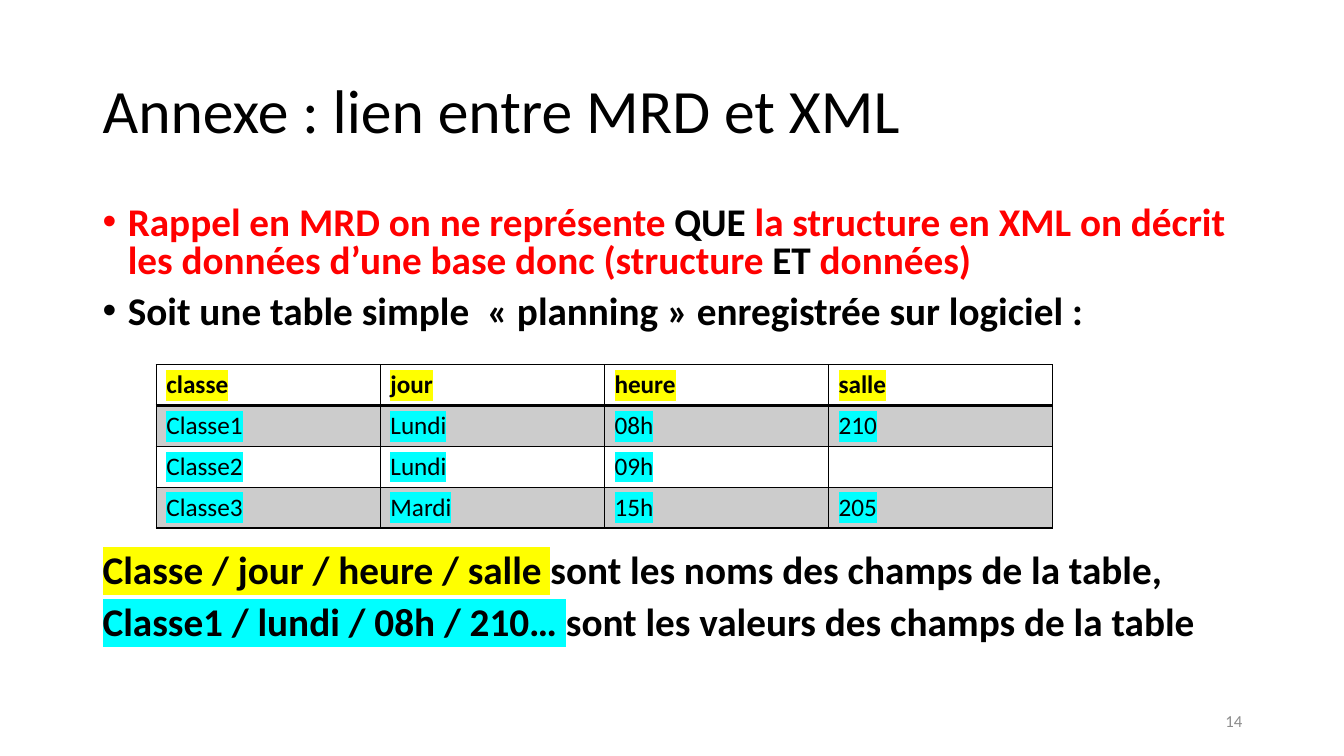
import pptx
import pptx.util
import pptx.dml.color
import pptx.enum.text
import pptx.oxml
import pptx.oxml.ns
from lxml import etree

Inches = pptx.util.Inches
Pt = pptx.util.Pt
RGBColor = pptx.dml.color.RGBColor
Anchor = pptx.enum.text.MSO_ANCHOR
Align = pptx.enum.text.PP_ALIGN
qn = pptx.oxml.ns.qn

BLACK = RGBColor(0x00, 0x00, 0x00)
RED = RGBColor(0xFF, 0x00, 0x00)
GRAY = RGBColor(0x8C, 0x8C, 0x8C)
YELLOW = RGBColor(0xFF, 0xFF, 0x00)
CYAN = RGBColor(0x00, 0xFF, 0xFF)

BODY_FONT = {"size": Pt(28), "bold": True}
BODY_PARAGRAPH = {"line_spacing": 0.8, "space_before": Pt(10)}

# Runs are (text, colour, highlight)
REMINDERS = [
    [("Rappel en MRD on ne représente ", RED, None), ("QUE", BLACK, None),
     (" la structure en XML on décrit les données d’une base donc (structure ", RED, None),
     ("ET", BLACK, None), (" données)", RED, None)],
    [("Soit une table simple  « planning » enregistrée sur logiciel :", BLACK, None)],
]
LEGEND = [
    [("Classe / jour / heure / salle ", BLACK, YELLOW),
     ("sont les noms des champs de la table,", BLACK, None)],
    [("Classe1 / lundi / 08h / 210… ", BLACK, CYAN),
     ("sont les valeurs des champs de la table", BLACK, None)],
]
PLANNING = [
    ["classe", "jour", "heure", "salle"],
    ["Classe1", "Lundi", "08h", "210"],
    ["Classe2", "Lundi", "09h", ""],
    ["Classe3", "Mardi", "15h", "205"],
]


def set_attributes(target, values):
    for name, value in values.items():
        setattr(target, name, value)


def add_run(paragraph, text, color, highlight, font):
    run = paragraph.add_run()
    run.text = text
    set_attributes(run.font, {"name": "Calibri", **font})
    run.font.color.rgb = color
    if highlight is not None:
        element = etree.Element(qn("a:highlight"))
        etree.SubElement(element, qn("a:srgbClr"), val=str(highlight))
        run.font.fill  # the highlight follows the fill in the run properties
        run.font._element.find(qn("a:solidFill")).addnext(element)


def add_bullet(paragraph):
    properties = paragraph._p.get_or_add_pPr()
    properties.set("marL", str(Inches(0.25)))
    properties.set("indent", str(-Inches(0.25)))
    etree.SubElement(properties, qn("a:buFont"), typeface="Arial")
    etree.SubElement(properties, qn("a:buChar"), char="•")


def add_text(slide, box, paragraphs, font, paragraph_format,
             anchor=Anchor.TOP, bulleted=False):
    frame = slide.shapes.add_textbox(*map(Inches, box)).text_frame
    set_attributes(frame, {"word_wrap": True, "vertical_anchor": anchor})
    for index, runs in enumerate(paragraphs):
        paragraph = frame.add_paragraph() if index else frame.paragraphs[0]
        set_attributes(paragraph, paragraph_format)
        if bulleted:
            add_bullet(paragraph)
        for text, color, highlight in runs:
            add_run(paragraph, text, color, highlight, font)


def add_title(slide, box):
    add_text(slide, box, [[("Annexe : lien entre MRD et XML", BLACK, None)]],
             {"size": Pt(44)}, {"line_spacing": 0.9}, Anchor.MIDDLE)


def add_body(slide, box):
    left, top, width, height = box
    legend_offset = 3.45
    add_text(slide, (left, top, width, 1.5), REMINDERS,
             BODY_FONT, BODY_PARAGRAPH, bulleted=True)
    add_text(slide, (left, top + legend_offset, width, height - legend_offset),
             LEGEND, BODY_FONT, BODY_PARAGRAPH)


def set_borders(cell, widths):
    properties = cell._tc.get_or_add_tcPr()
    for index, (side, width) in enumerate(widths.items()):
        line = etree.Element(qn(f"a:{side}"), w=str(Pt(width)))
        fill = etree.SubElement(line, qn("a:solidFill"))
        etree.SubElement(fill, qn("a:srgbClr"), val=str(BLACK))
        properties.insert(index, line)


def shade(cell):
    cell.fill.solid()
    cell.fill.fore_color.rgb = BLACK
    color = cell._tc.tcPr.find(qn("a:solidFill")).find(qn("a:srgbClr"))
    etree.SubElement(color, qn("a:alpha"), val="20000")


def add_planning(slide, box):
    rows, columns = len(PLANNING), len(PLANNING[0])
    frame = slide.shapes.add_table(rows, columns, *map(Inches, box))
    table = frame.table
    set_attributes(table, {"first_row": False, "horz_banding": False})
    for row, values in enumerate(PLANNING):
        header = row == 0
        for column, text in enumerate(values):
            cell = table.cell(row, column)
            if row % 2:
                shade(cell)
            else:
                cell.fill.background()
            set_borders(cell, {"lnL": 1, "lnR": 1, "lnT": 2 if row == 1 else 1,
                               "lnB": 2 if header else 1})
            paragraph = cell.text_frame.paragraphs[0]
            if text:
                add_run(paragraph, text, BLACK, YELLOW if header else CYAN,
                        {"size": Pt(18), "bold": header})


def add_slide_number(slide, box):
    add_text(slide, box, [[("14", GRAY, None)]], {"size": Pt(12)},
             {"alignment": Align.RIGHT}, Anchor.MIDDLE)


def main():
    presentation = pptx.Presentation()
    set_attributes(presentation, {"slide_width": Inches(13.33),
                                  "slide_height": Inches(7.5)})
    slide = presentation.slides.add_slide(presentation.slide_layouts[6])
    add_title(slide, (0.92, 0.4, 11.5, 1.45))
    add_body(slide, (0.92, 2, 11.5, 4.76))
    add_slide_number(slide, (9.42, 6.95, 3, 0.4))
    add_planning(slide, (1.55, 3.62, 8.89, 1.62))
    presentation.save("out.pptx")


if __name__ == "__main__":
    main()
